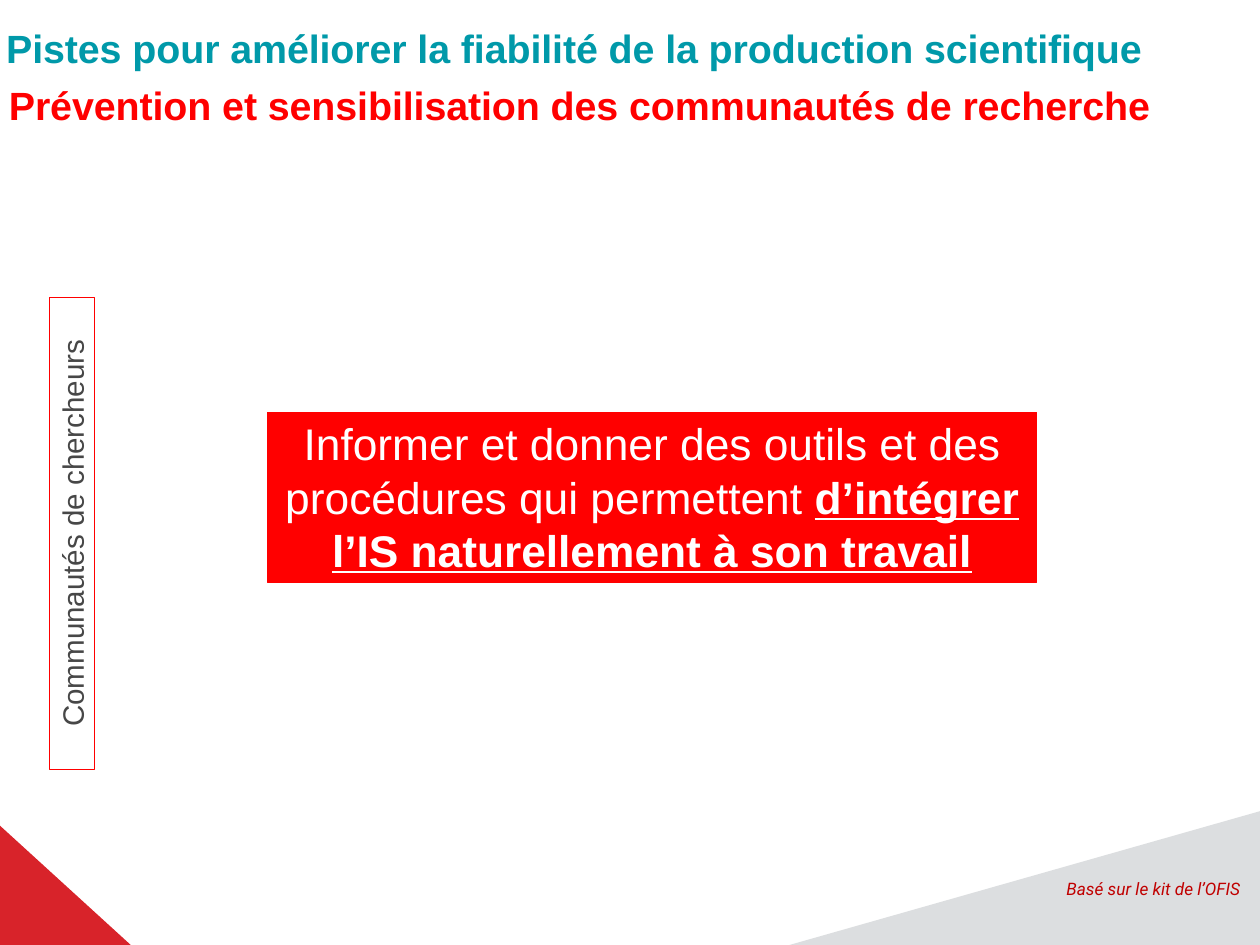
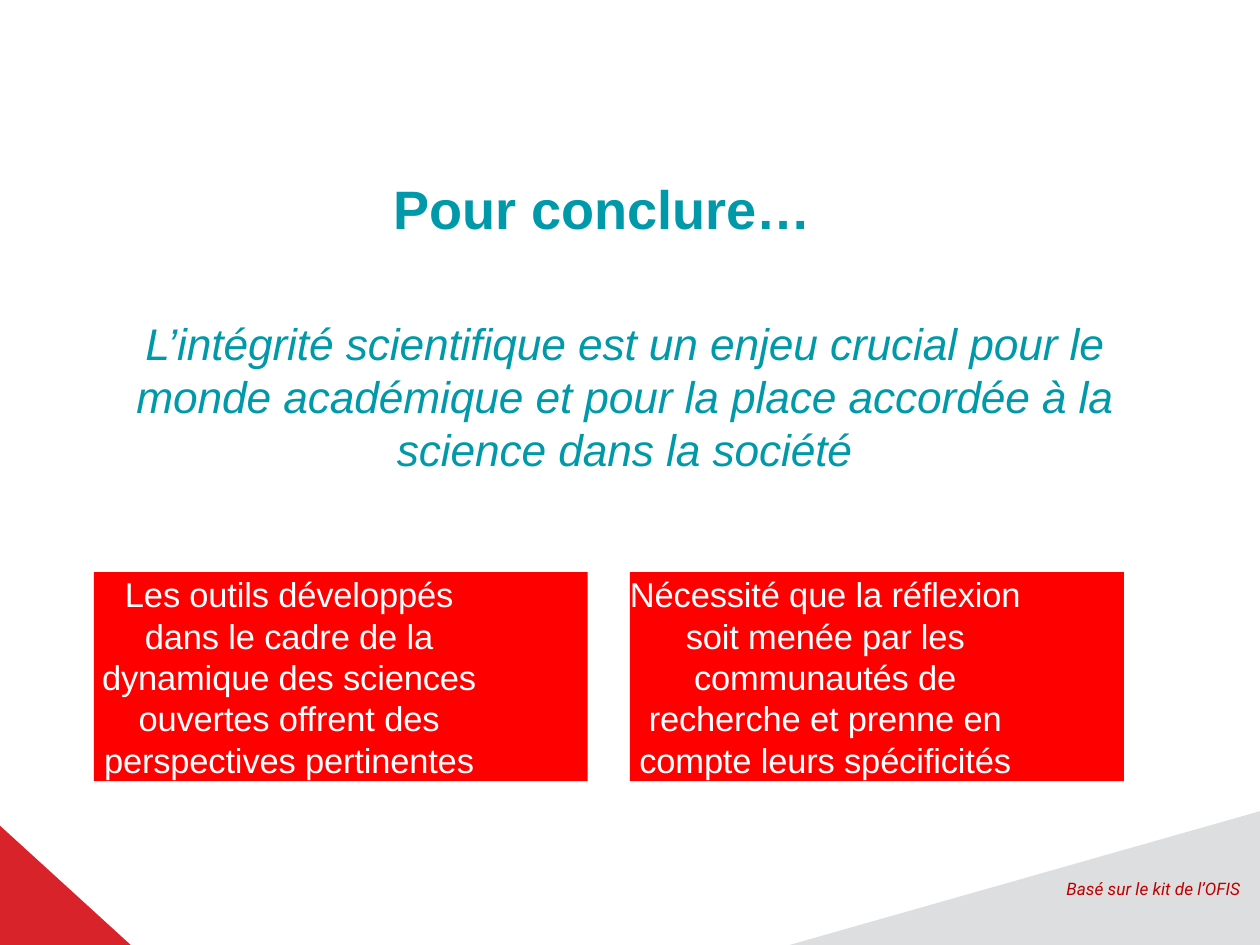
import pptx
import pptx.util
import pptx.dml.color
import pptx.enum.shapes
import pptx.enum.text
from pptx.util import Cm, Pt

RGBColor = pptx.dml.color.RGBColor
PP_ALIGN = pptx.enum.text.PP_ALIGN
ANCHOR = pptx.enum.text.MSO_ANCHOR

TEAL = RGBColor(0x00, 0x99, 0xA9)
RED = RGBColor(0xFF, 0x00, 0x00)
WHITE = RGBColor(0xFF, 0xFF, 0xFF)
DARK_GREY = RGBColor(0x47, 0x47, 0x47)
CORNER_RED = RGBColor(0xD8, 0x23, 0x2A)
CORNER_GREY = RGBColor(0xDC, 0xDE, 0xE0)
CREDIT_RED = RGBColor(0xC0, 0x00, 0x00)

WIDTH, HEIGHT = 36.12, 27.1
CORNERS = [
    (CORNER_RED, [(-32.41, 27.23), (3.89, 27.23), (-25.98, -0.03), (-32.49, -0.03)]),
    (CORNER_GREY, [(46.36, 20.35), (7.8, 31.32), (7.67, 35.08), (46.41, 35.08)]),
]
CREDIT = "Basé sur le kit de l’OFIS"
HEADINGS = [
    ("Pistes pour améliorer la fiabilité de la production scientifique ", TEAL),
    ("Prévention et sensibilisation des communautés de recherche", RED),
]
AUDIENCE = "Communautés de chercheurs"
GOAL = "Informer et donner des outils et des procédures qui permettent "
GOAL_STRESSED = "d’intégrer l’IS naturellement à son travail"
CONCLUSION = "Pour conclure…"
STAKE = ("L’intégrité scientifique est un enjeu crucial pour le monde académique "
         "et pour la place accordée à la science dans la société")
PERSPECTIVES = [
    "Les outils développés dans le cadre de la dynamique des sciences ouvertes "
    "offrent des perspectives pertinentes",
    "Nécessité que la réflexion soit menée par les communautés de recherche "
    "et prenne en compte leurs spécificités",
]

DEFAULT_INSETS = (0.25, 0.13, 0.25, 0.13)
HEADING_INSETS = (0, 0.03, 2.97, 0)


def style(run, size, color, font="Arial", bold=False, italic=False, underline=False):
    run.font.name = font
    run.font.size = Pt(size)
    run.font.color.rgb = color
    run.font.bold = bold
    run.font.italic = italic
    run.font.underline = underline


def prepare(frame, insets, anchor=ANCHOR.TOP):
    frame.word_wrap = True
    frame.vertical_anchor = anchor
    (frame.margin_left, frame.margin_top,
     frame.margin_right, frame.margin_bottom) = map(Cm, insets)


def add_text(slide, place):
    return slide.shapes.add_textbox(*map(Cm, place))


def add_panel(slide, place, fill=None, outlined=False):
    panel = slide.shapes.add_shape(
        pptx.enum.shapes.MSO_SHAPE.RECTANGLE, *map(Cm, place))
    panel.shadow.inherit = False
    if fill is None:
        panel.fill.background()
    else:
        panel.fill.solid()
        panel.fill.fore_color.rgb = fill
    if outlined:
        panel.line.color.rgb = RED
        panel.line.width = Pt(0.75)
    else:
        panel.line.fill.background()
    return panel


def write(frame, parts, align=PP_ALIGN.CENTER):
    paragraph = frame.paragraphs[0]
    paragraph.alignment = align
    for text, size, color, look in parts:
        run = paragraph.add_run()
        run.text = text
        style(run, size, color, **look)


def write_heading(frame, lines, size, **look):
    prepare(frame, HEADING_INSETS)
    frame.text = "\n".join(text for text, _ in lines)
    for paragraph, (_, color) in zip(frame.paragraphs, lines):
        paragraph.alignment = PP_ALIGN.CENTER
        paragraph.line_spacing = 1.0
        paragraph.space_before = Pt(7.7)
        run = paragraph.runs[0]
        style(run, size, color, **look)
        run._r.get_or_add_rPr().set("spc", "-10")


def add_base_slide(deck):
    slide = deck.slides.add_slide(deck.slide_layouts[6])
    for color, points in CORNERS:
        start, *others = [(Cm(x), Cm(y)) for x, y in points]
        builder = slide.shapes.build_freeform(*start)
        builder.add_line_segments(others, close=True)
        corner = builder.convert_to_shape()
        corner.shadow.inherit = False
        corner.fill.solid()
        corner.fill.fore_color.rgb = color
        corner.line.fill.background()
    credit = add_text(slide, (29.97, 24.97, 5.84, 1.02)).text_frame
    prepare(credit, DEFAULT_INSETS, ANCHOR.MIDDLE)
    write(credit, [(CREDIT, 14, CREDIT_RED, {"font": "Roboto", "italic": True})],
          PP_ALIGN.RIGHT)
    return slide


def build_prevention(deck):
    slide = add_base_slide(deck)
    headings = add_text(slide, (0, 0.66, 36.17, 3))
    write_heading(headings.text_frame, HEADINGS, 32, bold=True)

    audience = add_panel(slide, (-4.7, 14.65, 13.54, 1.28), outlined=True)
    audience.rotation = 270
    prepare(audience.text_frame, DEFAULT_INSETS)
    write(audience.text_frame, [(AUDIENCE, 24, DARK_GREY, {})])

    goal = add_panel(slide, (7.67, 11.82, 22.05, 4.88), RED, outlined=True)
    prepare(goal.text_frame, DEFAULT_INSETS)
    write(goal.text_frame, [
        (GOAL, 36, WHITE, {}),
        (GOAL_STRESSED, 36, WHITE, {"bold": True, "underline": True}),
    ])


def build_conclusion(deck):
    slide = add_base_slide(deck)
    conclusion = add_text(slide, (2.59, 5, 32.31, 1.83))
    write_heading(conclusion.text_frame, [(CONCLUSION, TEAL)], 44, bold=True)
    stake = add_text(slide, (3.23, 9.04, 32.31, 4.6))
    write_heading(stake.text_frame, [(STAKE, TEAL)], 36, italic=True)

    left, width, gap = 2.69, 14.16, 1.21
    for column, text in enumerate(PERSPECTIVES):
        place = (left + column * (width + gap), 16.41, width, 5.99)
        perspective = add_panel(slide, place, RED)
        write_heading(perspective.text_frame, [(text, WHITE)], 28)


def main():
    deck = pptx.Presentation()
    deck.slide_width, deck.slide_height = Cm(WIDTH), Cm(HEIGHT)
    build_prevention(deck)
    build_conclusion(deck)
    deck.save("out.pptx")


if __name__ == "__main__":
    main()
